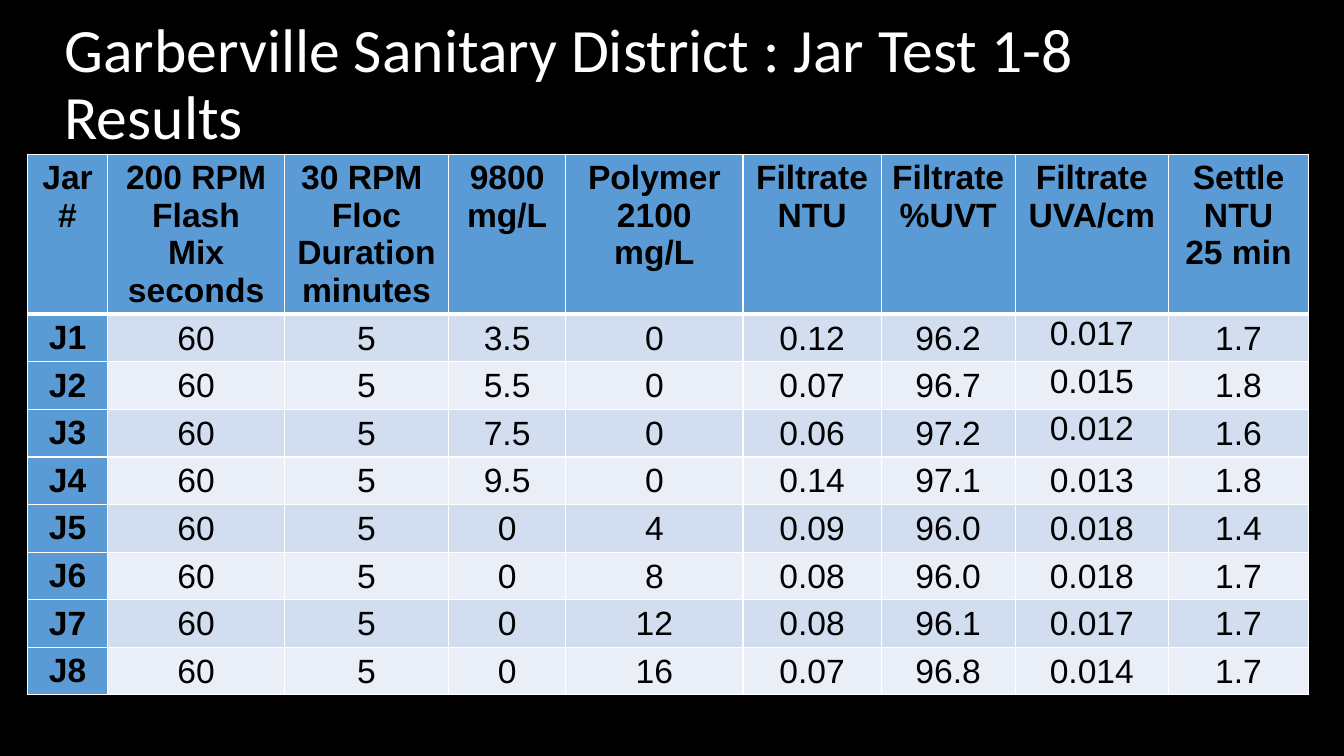
from dataclasses import dataclass

from lxml import etree
from pptx import Presentation
from pptx import util as u
from pptx.dml.color import RGBColor
from pptx.enum import text
from pptx.oxml import ns

GRID_UNIT = u.Inches(0.01)
GRID_COLUMNS, GRID_ROWS = 1333, 750

BLACK, WHITE = "000000", "FFFFFF"
HEADING_BLUE = "5B9BD5"
BANDS = ("D2DEEF", "EAEFF7")

FLASH_MIX_SECONDS, FLOC_MINUTES = "60", "5"
ROW_HEIGHT = 41
HEADING_INSETS = (10, 5, 10, 5)
RESULT_INSETS = (1, 1, 1, 0)


@dataclass(frozen=True)
class Column:
    width: int
    heading: tuple[str, ...]


@dataclass(frozen=True)
class JarTest:
    jar: str
    primary_dose: str
    secondary_dose: str
    filtrate_ntu: str
    filtrate_uvt: str
    filtrate_uva: str
    settle_ntu: str
    uva_anchor: text.MSO_ANCHOR = text.MSO_ANCHOR.MIDDLE

    def results(self) -> tuple[str, ...]:
        return (
            FLASH_MIX_SECONDS, FLOC_MINUTES, self.primary_dose, self.secondary_dose,
            self.filtrate_ntu, self.filtrate_uvt, self.filtrate_uva, self.settle_ntu,
        )


COLUMNS = (
    Column(80, ("Jar", "#")),
    Column(175, ("200 RPM", "Flash", "Mix", "seconds")),
    Column(163, ("30 RPM ", "Floc", "Duration", "minutes")),
    Column(116, ("9800", "mg/L")),
    Column(176, ("Polymer 2100", "mg/L")),
    Column(137, ("Filtrate", "NTU")),
    Column(133, ("Filtrate", "%UVT")),
    Column(152, ("Filtrate", "UVA/cm")),
    Column(139, ("Settle", "NTU", "25 min")),
)
UVA_COLUMN = 7

TOP = text.MSO_ANCHOR.TOP
JAR_TESTS = (
    JarTest("J1", "3.5", "0", "0.12", "96.2", "0.017", "1.7", TOP),
    JarTest("J2", "5.5", "0", "0.07", "96.7", "0.015", "1.8", TOP),
    JarTest("J3", "7.5", "0", "0.06", "97.2", "0.012", "1.6", TOP),
    JarTest("J4", "9.5", "0", "0.14", "97.1", "0.013", "1.8"),
    JarTest("J5", "0", "4", "0.09", "96.0", "0.018", "1.4"),
    JarTest("J6", "0", "8", "0.08", "96.0", "0.018", "1.7"),
    JarTest("J7", "0", "12", "0.08", "96.1", "0.017", "1.7"),
    JarTest("J8", "0", "16", "0.07", "96.8", "0.014", "1.7"),
)


def grid(units: int) -> u.Emu:
    return u.Emu(units * GRID_UNIT)


def colour(value: str) -> RGBColor:
    return RGBColor.from_string(value)


def add_run(paragraph, words: str, font: str, size: int, ink: str, bold: bool = False) -> None:
    run = paragraph.add_run()
    run.text = words
    run.font.name = font
    run.font.size = u.Pt(size)
    run.font.bold = bold
    run.font.color.rgb = colour(ink)


def set_borders(cell, bottom_width: int) -> None:
    properties = cell._tc.get_or_add_tcPr()
    for side, width in (("L", 1), ("R", 1), ("T", 1), ("B", bottom_width)):
        line = etree.SubElement(properties, ns.qn(f"a:ln{side}"), w=str(u.Pt(width)))
        fill = etree.SubElement(line, ns.qn("a:solidFill"))
        etree.SubElement(fill, ns.qn("a:srgbClr"), val=WHITE)


def fill_cell(
    cell,
    lines: tuple[str, ...],
    background: str,
    bold: bool,
    insets: tuple[int, int, int, int],
    anchor: text.MSO_ANCHOR = TOP,
    bottom_width: int = 1,
) -> None:
    set_borders(cell, bottom_width)
    cell.fill.solid()
    cell.fill.fore_color.rgb = colour(background)
    cell.margin_left, cell.margin_top, cell.margin_right, cell.margin_bottom = map(grid, insets)
    cell.vertical_anchor = anchor
    frame = cell.text_frame
    for index, words in enumerate(lines):
        paragraph = frame.add_paragraph() if index else frame.paragraphs[0]
        paragraph.alignment = text.PP_ALIGN.CENTER
        add_run(paragraph, words, "Arial", 24, BLACK, bold)


def add_title(slide, words: str) -> None:
    title = slide.shapes.title
    title.left, title.top, title.width, title.height = map(grid, (54, 13, 1188, 145))
    frame = title.text_frame
    frame.word_wrap = True
    frame.auto_size = text.MSO_AUTO_SIZE.NONE
    frame.vertical_anchor = text.MSO_ANCHOR.MIDDLE
    paragraph = frame.paragraphs[0]
    paragraph.alignment = text.PP_ALIGN.LEFT
    paragraph.line_spacing = 0.9
    add_run(paragraph, words, "Calibri", 44, WHITE)


def add_results_table(slide) -> None:
    row_count = len(JAR_TESTS) + 1
    table_width = sum(column.width for column in COLUMNS)
    bounds = map(grid, (27, 153, table_width, ROW_HEIGHT * row_count))
    table = slide.shapes.add_table(row_count, len(COLUMNS), *bounds).table
    for row in table.rows:
        row.height = grid(ROW_HEIGHT)
    for index, column in enumerate(COLUMNS):
        table.columns[index].width = grid(column.width)
        fill_cell(table.cell(0, index), column.heading, HEADING_BLUE, True,
                  HEADING_INSETS, bottom_width=3)
    for row_index, test in enumerate(JAR_TESTS, start=1):
        fill_cell(table.cell(row_index, 0), (test.jar,), HEADING_BLUE, True, HEADING_INSETS)
        band = BANDS[(row_index - 1) % len(BANDS)]
        for index, result in enumerate(test.results(), start=1):
            anchor = test.uva_anchor if index == UVA_COLUMN else text.MSO_ANCHOR.MIDDLE
            fill_cell(table.cell(row_index, index), (result,), band, False,
                      RESULT_INSETS, anchor)


def main() -> None:
    presentation = Presentation()
    presentation.slide_width = grid(GRID_COLUMNS)
    presentation.slide_height = grid(GRID_ROWS)
    slide = presentation.slides.add_slide(presentation.slide_layouts.get_by_name("Title Only"))
    slide.background.fill.solid()
    slide.background.fill.fore_color.rgb = colour(BLACK)
    add_title(slide, "Garberville Sanitary District : Jar Test 1-8 Results")
    add_results_table(slide)
    presentation.save("out.pptx")


if __name__ == "__main__":
    main()
